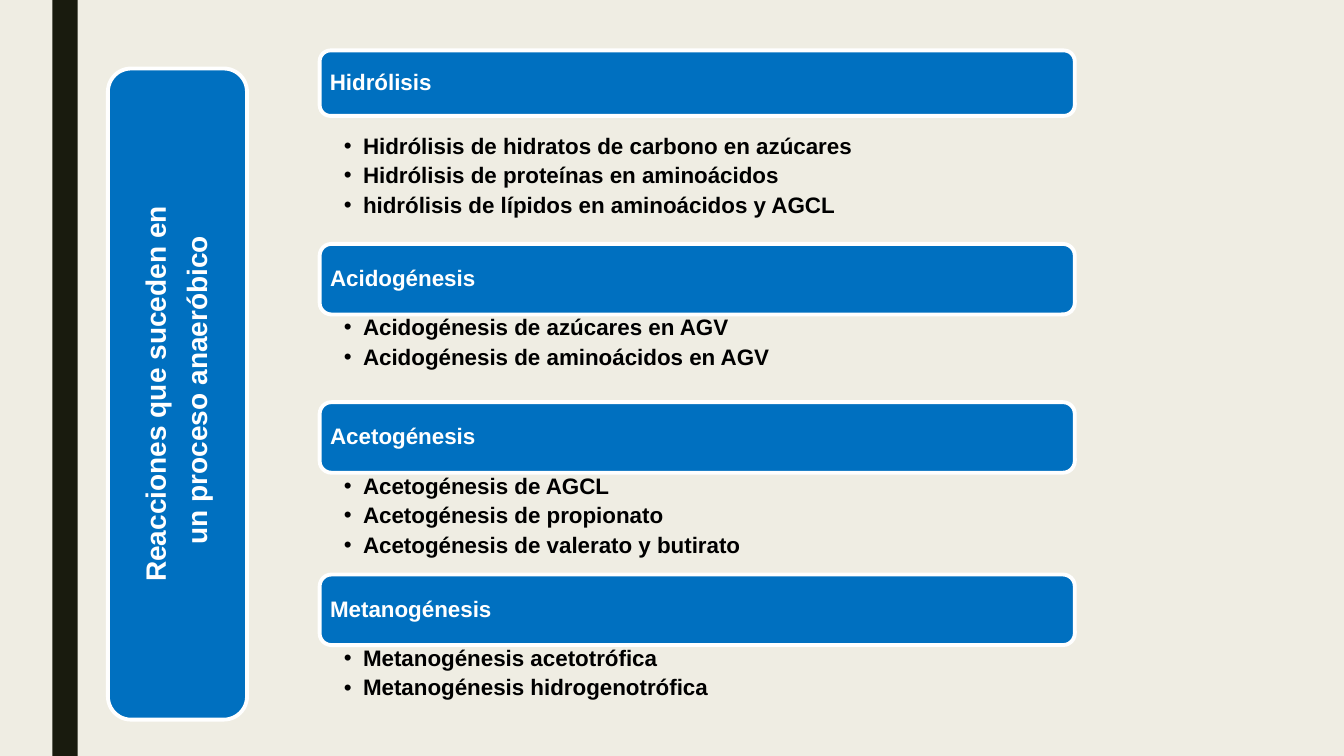
from pptx import Presentation
from pptx.dml.color import RGBColor
from pptx.enum.shapes import MSO_SHAPE as Shape
from pptx.enum.text import MSO_ANCHOR as Anchor, PP_ALIGN as Align
from pptx.oxml.ns import qn
from pptx.util import Inches, Pt
from lxml.etree import SubElement

TITLE = ["Reacciones que suceden en", " un proceso anaeróbico"]

# name, bar top, bar height, list top, list height, reactions
STAGES = [
    ("Hidrólisis", 0.5, 0.65, 1.32, 0.99, [
        "Hidrólisis de hidratos de carbono en azúcares",
        "Hidrólisis de proteínas en aminoácidos",
        "hidrólisis de lípidos en aminoácidos y AGCL"]),
    ("Acidogénesis", 2.42, 0.7, 3.12, 1.05, [
        "Acidogénesis de azúcares en AGV",
        "Acidogénesis de aminoácidos en AGV"]),
    ("Acetogénesis", 3.99, 0.7, 4.69, 1.05, [
        "Acetogénesis de AGCL",
        "Acetogénesis de propionato",
        "Acetogénesis de valerato y butirato"]),
    ("Metanogénesis", 5.7, 0.7, 6.4, 1.05, [
        "Metanogénesis acetotrófica",
        "Metanogénesis hidrogenotrófica"]),
]

THEME = {
    "background": "EFEDE3", "stripe": "191B0E", "panel": "0070C0",
    "light": "FFFFFF", "dark": "000000",
    "font": "Arial", "title_size": 20, "body_size": 16, "outline": 2.75,
}
STAGE_LEFT, STAGE_WIDTH = 3.17, 7.49
BULLET_INDENT = 0.19


def color(name):
    return RGBColor.from_string(THEME[name])


def add_panel(slide, kind, box, fill, outline=None):
    shape = slide.shapes.add_shape(kind, *map(Inches, box))
    shape.shadow.inherit = False
    shape.fill.solid()
    shape.fill.fore_color.rgb = color(fill)
    if outline:
        shape.line.color.rgb = color(outline)
        shape.line.width = Pt(THEME["outline"])
    else:
        shape.line.fill.background()
    return shape


def add_bullet(paragraph):
    paragraph.level = 1
    properties = paragraph._p.get_or_add_pPr()
    properties.set("marL", str(Inches(BULLET_INDENT)))
    properties.set("indent", str(-Inches(BULLET_INDENT)))
    SubElement(properties, qn("a:buFont")).set("typeface", THEME["font"])
    SubElement(properties, qn("a:buChar")).set("char", "•")


def write(shape, lines, size="body_size", ink="light", align=Align.LEFT,
          anchor=Anchor.MIDDLE, insets=(0.07,) * 4, after=6.4, bullets=False):
    """Fill a shape with paragraphs; insets run left, top, right, bottom."""
    frame = shape.text_frame
    frame.word_wrap = True
    frame.vertical_anchor = anchor
    (frame.margin_left, frame.margin_top,
     frame.margin_right, frame.margin_bottom) = map(Inches, insets)
    for index, line in enumerate(lines):
        paragraph = frame.add_paragraph() if index else frame.paragraphs[0]
        paragraph.alignment = align
        paragraph.line_spacing = 0.9
        paragraph.space_after = Pt(after)
        if bullets:
            add_bullet(paragraph)
        run = paragraph.add_run()
        run.text = line
        run.font.name = THEME["font"]
        run.font.size = Pt(THEME[size])
        run.font.bold = True
        run.font.color.rgb = color(ink)


def add_stage(slide, name, bar_top, bar_height, list_top, list_height, reactions):
    bar_box = (STAGE_LEFT, bar_top, STAGE_WIDTH, bar_height)
    bar = add_panel(slide, Shape.ROUNDED_RECTANGLE, bar_box, "panel", "light")
    write(bar, [name])
    list_box = (STAGE_LEFT, list_top, STAGE_WIDTH, list_height)
    reaction_list = slide.shapes.add_textbox(*map(Inches, list_box))
    write(reaction_list, reactions, ink="dark", anchor=Anchor.TOP,
          insets=(0.24, 0.02, 0.12, 0.02), after=3.8, bullets=True)


def main():
    presentation = Presentation()
    presentation.slide_width = Inches(13.33)
    presentation.slide_height = Inches(7.5)
    slide = presentation.slides.add_slide(presentation.slide_layouts[6])
    slide.background.fill.solid()
    slide.background.fill.fore_color.rgb = color("background")

    add_panel(slide, Shape.RECTANGLE, (0.52, 0, 0.25, 7.5), "stripe")
    title = add_panel(slide, Shape.ROUNDED_RECTANGLE,
                      (1.07, 0.68, 1.38, 6.46), "panel", "light")
    write(title, TITLE, size="title_size", align=Align.CENTER,
          insets=(0.08,) * 4, after=8)
    title.text_frame._txBody.bodyPr.set("vert", "vert270")

    for stage in STAGES:
        add_stage(slide, *stage)
    presentation.save("out.pptx")


if __name__ == "__main__":
    main()
